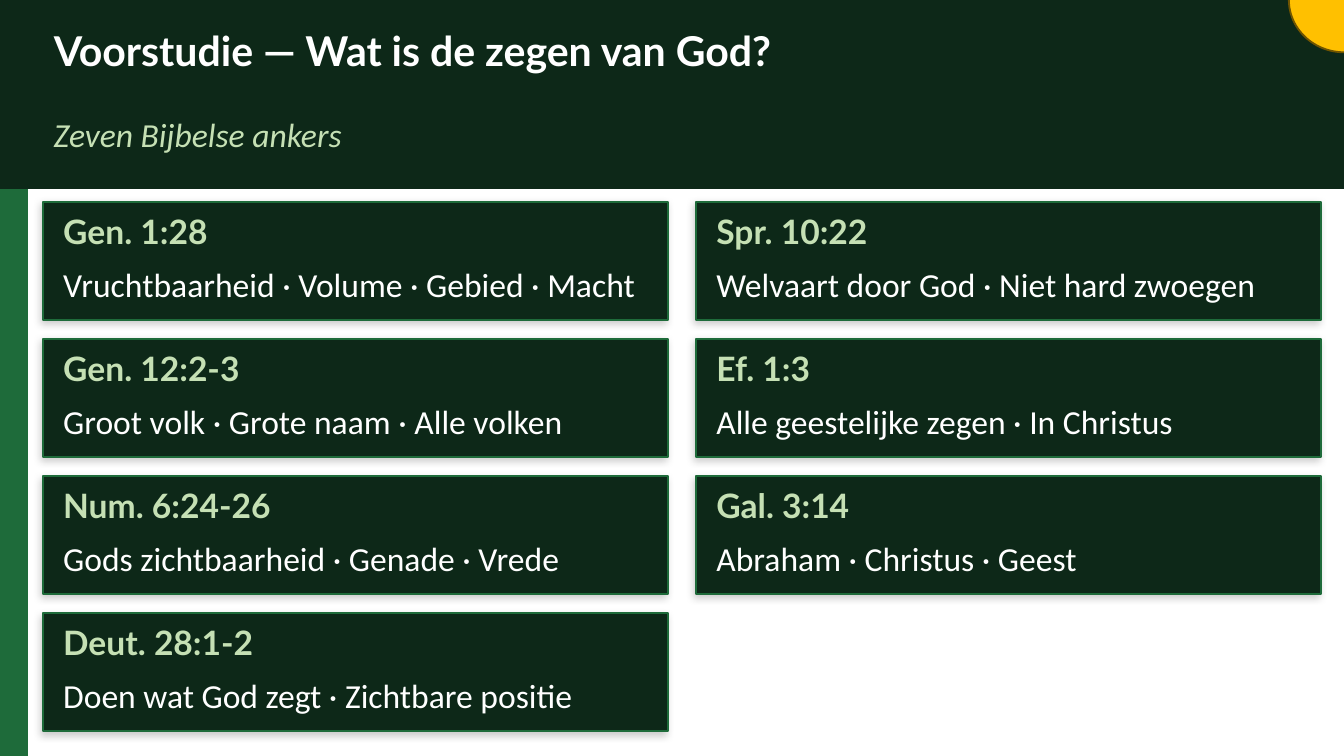
import lxml.etree
import pptx
import pptx.dml.color
import pptx.enum.shapes
import pptx.enum.text
import pptx.oxml.ns
import pptx.util

Inches = pptx.util.Inches
RGBColor = pptx.dml.color.RGBColor
SHAPE = pptx.enum.shapes.MSO_SHAPE

DARK = RGBColor(0x0D, 0x28, 0x18)
GREEN = RGBColor(0x1E, 0x6B, 0x3A)
PALE = RGBColor(0xC5, 0xE0, 0xB4)
WHITE = RGBColor(0xFF, 0xFF, 0xFF)
GOLD = RGBColor(0xFF, 0xC0, 0x00)
BROWN = RGBColor(0x70, 0x54, 0x00)

SLIDE_W = 10
SLIDE_H = SLIDE_W * 9 / 16
CARD_W, CARD_H = 4.65, 0.88
LEFT, TOP = 0.32, 1.5
COL_STEP, ROW_STEP = 4.86, 1.02

COLUMNS = [
    [
        ("Gen. 1:28", "Vruchtbaarheid · Volume · Gebied · Macht"),
        ("Gen. 12:2-3", "Groot volk · Grote naam · Alle volken"),
        ("Num. 6:24-26", "Gods zichtbaarheid · Genade · Vrede"),
        ("Deut. 28:1-2", "Doen wat God zegt · Zichtbare positie"),
    ],
    [
        ("Spr. 10:22", "Welvaart door God · Niet hard zwoegen"),
        ("Ef. 1:3", "Alle geestelijke zegen · In Christus"),
        ("Gal. 3:14", "Abraham · Christus · Geest"),
    ],
]


def add_block(s, kind, x, y, w, h, fill, line):
    sp = s.shapes.add_shape(kind, Inches(x), Inches(y), Inches(w), Inches(h))
    sp.fill.solid()
    sp.fill.fore_color.rgb = fill
    sp.line.color.rgb = line
    sp.line.width = pptx.util.Pt(1)
    sp.shadow.inherit = False
    return sp


def add_soft_shadow(sp):
    qn = pptx.oxml.ns.qn
    effects = sp._element.spPr.find(qn("a:effectLst"))
    shadow = lxml.etree.SubElement(
        effects, qn("a:outerShdw"), blurRad="50800", dist="25400",
        dir="8100000", algn="bl", rotWithShape="0")
    color = lxml.etree.SubElement(shadow, qn("a:srgbClr"), val="000000")
    lxml.etree.SubElement(color, qn("a:alpha"), val="20000")


def write(sp, text, size, font, color, bold=False, italic=False):
    """Fill a text shape with one line, without insets."""
    tf = sp.text_frame
    tf.word_wrap = True
    tf.auto_size = pptx.enum.text.MSO_AUTO_SIZE.NONE
    tf.vertical_anchor = pptx.enum.text.MSO_ANCHOR.MIDDLE
    tf.margin_left = tf.margin_right = tf.margin_top = tf.margin_bottom = 0
    p = tf.paragraphs[0]
    p.alignment = pptx.enum.text.PP_ALIGN.LEFT
    r = p.add_run()
    r.text = text
    r.font.size = pptx.util.Pt(size)
    r.font.name = font
    r.font.color.rgb = color
    r.font.bold = bold
    r.font.italic = italic


def add_text(s, x, y, w, h, *args, **style):
    sp = s.shapes.add_textbox(Inches(x), Inches(y), Inches(w), Inches(h))
    write(sp, *args, **style)


def add_header(s, x, y, w, h):
    add_block(s, SHAPE.RECTANGLE, x, y, w, h, DARK, DARK)
    title = s.shapes.title
    title.left, title.top = Inches(x + 0.4), Inches(y + 0.08)
    title.width, title.height = Inches(w - 0.8), Inches(0.58)
    write(title, "Voorstudie — Wat is de zegen van God?", 22, "Lato", WHITE, bold=True)
    s.shapes._spTree.append(title._element)  # in front of the banner
    add_text(s, x + 0.4, y + 0.72, w - 0.8, 0.55,
             "Zeven Bijbelse ankers", 18, "Calibri", PALE, italic=True)


def add_card(s, x, y, w, h, verse, summary):
    add_soft_shadow(add_block(s, SHAPE.RECTANGLE, x, y, w, h, DARK, GREEN))
    add_text(s, x + 0.15, y + 0.06, w - 0.2, 0.32, verse, 18, "Lato", PALE, bold=True)
    add_text(s, x + 0.15, y + 0.4, w - 0.2, 0.42, summary, 18, "Calibri", WHITE)


def main():
    prs = pptx.Presentation()
    prs.slide_width, prs.slide_height = Inches(SLIDE_W), Inches(SLIDE_H)
    s = prs.slides.add_slide(prs.slide_layouts[5])
    s.background.fill.solid()
    s.background.fill.fore_color.rgb = WHITE

    add_block(s, SHAPE.RECTANGLE, 0, 0, 0.2, SLIDE_H, GREEN, GREEN)
    add_header(s, 0, 0, SLIDE_W, 1.4)
    for col, cards in enumerate(COLUMNS):
        for row, (verse, summary) in enumerate(cards):
            add_card(s, LEFT + col * COL_STEP, TOP + row * ROW_STEP,
                     CARD_W, CARD_H, verse, summary)
    add_block(s, SHAPE.OVAL, 9.59, -0.39, 0.83, 0.78, GOLD, BROWN)
    prs.save("out.pptx")


if __name__ == "__main__":
    main()
